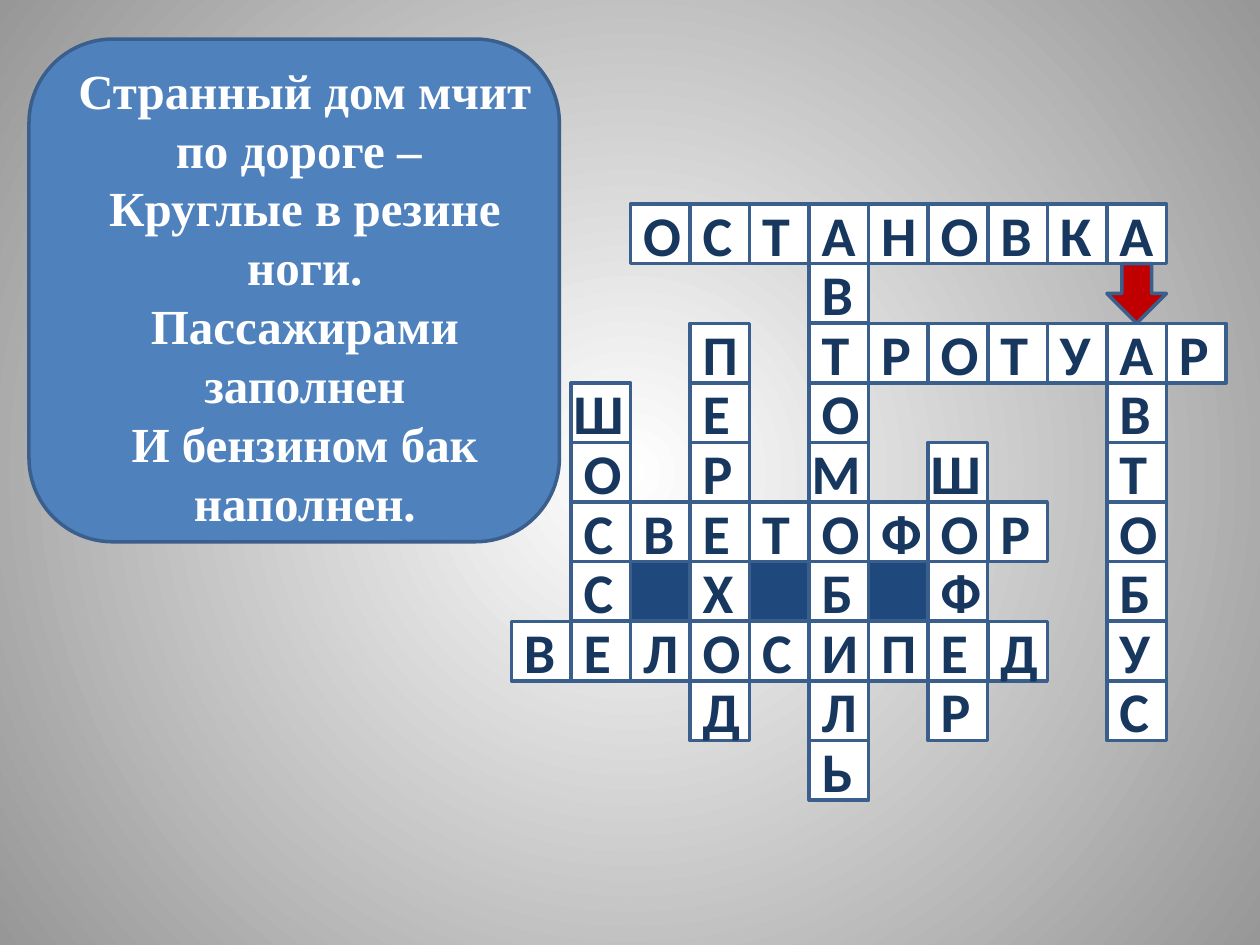
from lxml.etree import SubElement
from pptx import Presentation
from pptx.dml.color import RGBColor
from pptx.enum.shapes import MSO_SHAPE
from pptx.enum.text import PP_ALIGN
from pptx.oxml.ns import qn
from pptx.util import Inches, Pt

SLIDE_W, SLIDE_H = 10, 7.5
COLUMNS, ROWS = 12, 10

# word, first column, first row
ACROSS = [("ОСТАНОВКА", 2, 0), ("ТРОТУАР", 5, 2),
          ("СВЕТОФОР", 1, 5), ("ВЕЛОСИПЕД", 0, 7)]
DOWN = [("АВТОМОБИЛЬ", 5, 0), ("ПЕРЕХОД", 3, 2), ("ШОССЕ", 1, 3),
        ("ШОФЕР", 7, 4), ("АВТОБУС", 10, 2)]
BLOCKED = [(2, 6), (4, 6), (6, 6)]
ARROW = (10, 1)
WIDE_LETTERS = "ШМ"

RIDDLE = """Странный дом мчит по дороге – 
Круглые в резине ноги.
Пассажирами заполнен
И бензином бак наполнен."""

OUTLINE = "3A5F8C"
LETTER_FONT = {"name": "Calibri", "size": Pt(32), "bold": True}
RIDDLE_FONT = {"name": "Times New Roman", "size": Pt(28), "bold": True}


def color(hex_value):
    return RGBColor.from_string(hex_value)


def add_outlined(slide, preset, box, fill):
    shape = slide.shapes.add_shape(preset, *map(Inches, box))
    shape.shadow.inherit = False
    shape.fill.solid()
    shape.fill.fore_color.rgb = color(fill)
    shape.line.color.rgb = color(OUTLINE)
    shape.line.width = Pt(2)
    return shape


def add_text(slide, text, box, font_format, font_color, align=PP_ALIGN.LEFT):
    frame = slide.shapes.add_textbox(*map(Inches, box)).text_frame
    frame.word_wrap = True
    paragraph = frame.paragraphs[0]
    paragraph.text = text
    paragraph.alignment = align
    for run in paragraph.runs:
        for attribute, value in font_format.items():
            setattr(run.font, attribute, value)
        run.font.color.rgb = color(font_color)


def paint_background(slide):
    fill = slide.background.fill
    fill.gradient()
    for stop, shade in zip(fill.gradient_stops, ("FFFFFF", "979797")):
        stop.color.rgb = color(shade)
    # Turn the linear gradient into a radial one
    gradient = slide.element.find(".//" + qn("a:gradFill"))
    gradient.remove(gradient.find(qn("a:lin")))
    radial = SubElement(gradient, qn("a:path"), {"path": "circle"})
    SubElement(radial, qn("a:fillToRect"), dict.fromkeys("ltrb", "50000"))


def add_riddle(slide, box):
    left, top, width, height = box
    add_outlined(slide, MSO_SHAPE.ROUNDED_RECTANGLE, box, "4F81BD")
    text_box = (left + 0.05 * width, top + 0.03 * height,
                0.94 * width, 0.97 * height)
    add_text(slide, RIDDLE, text_box, RIDDLE_FONT, "FFFFFF", PP_ALIGN.CENTER)


def crossword_letters():
    """Map each (column, row) to its letter; crossings share one entry."""
    letters = {}
    for words, step_x, step_y in ((ACROSS, 1, 0), (DOWN, 0, 1)):
        for word, column, row in words:
            for i, letter in enumerate(word):
                letters[column + i * step_x, row + i * step_y] = letter
    return letters


def add_crossword(slide, box):
    left, top, width, height = box
    cell_w, cell_h = width / COLUMNS, height / ROWS

    def cell_box(column, row):
        return left + column * cell_w, top + row * cell_h, cell_w, cell_h

    letters = crossword_letters()

    # Cells, blocked cells and the arrow to the word being asked
    for cell in letters:
        add_outlined(slide, MSO_SHAPE.RECTANGLE, cell_box(*cell), "FFFFFF")
    for cell in BLOCKED:
        add_outlined(slide, MSO_SHAPE.RECTANGLE, cell_box(*cell), "1F497D")
    arrow = add_outlined(slide, MSO_SHAPE.RIGHT_ARROW, cell_box(*ARROW), "C00000")
    arrow.rotation = 90

    # Letters, with the wide ones moved left to stay inside their cells
    for cell, letter in letters.items():
        x, y, _, _ = cell_box(*cell)
        shift = 0.08 if letter in WIDE_LETTERS else 0
        add_text(slide, letter, (x - shift, y - 0.08, 0.55, 0.64),
                 LETTER_FONT, "17375E")


def main():
    presentation = Presentation()
    presentation.slide_width = Inches(SLIDE_W)
    presentation.slide_height = Inches(SLIDE_H)
    slide = presentation.slides.add_slide(presentation.slide_layouts[6])
    paint_background(slide)
    add_riddle(slide, (0.23, 0.31, 4.21, 3.99))
    add_crossword(slide, (4.06, 1.62, 5.67, 4.73))
    presentation.save("out.pptx")


if __name__ == "__main__":
    main()
